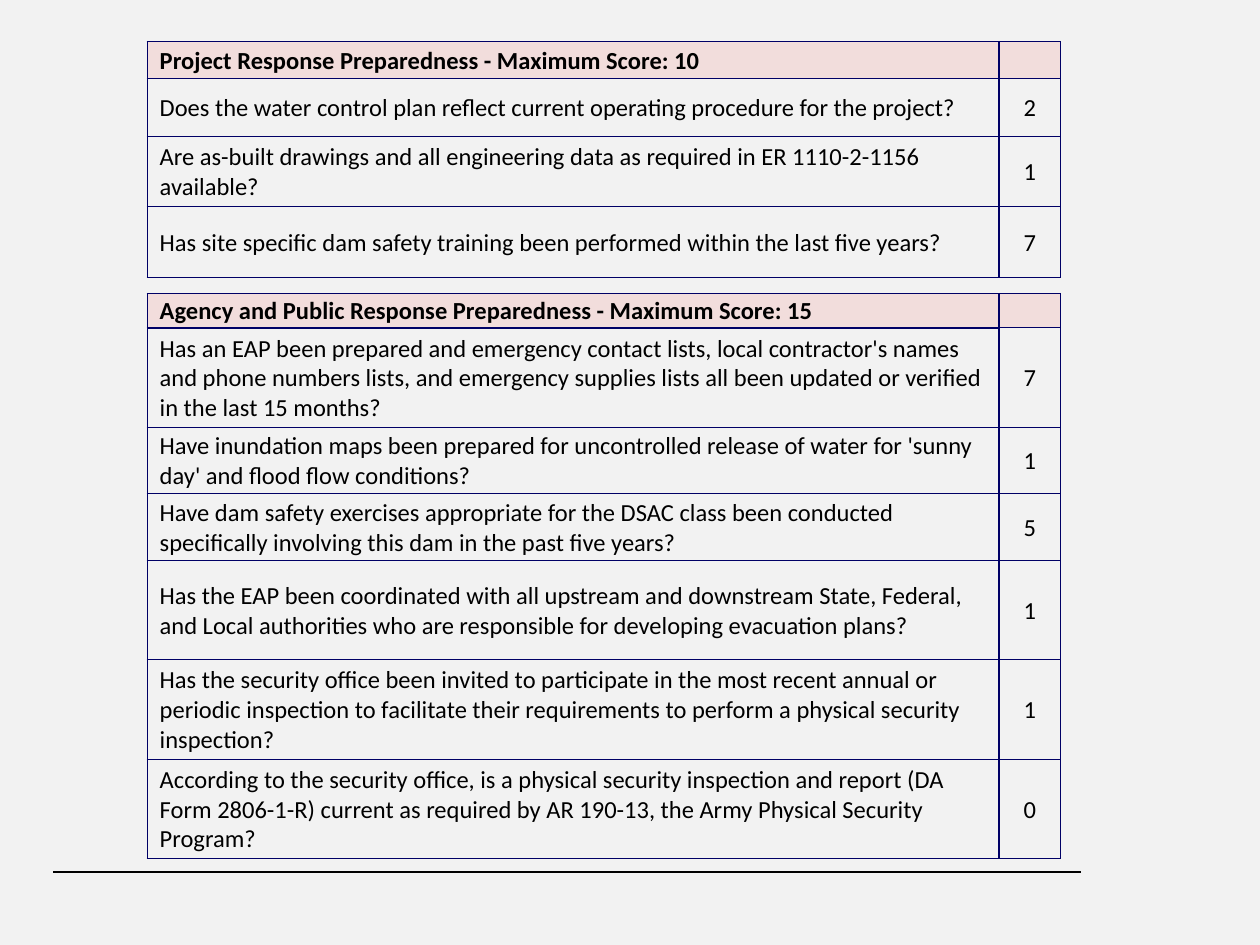
import dataclasses
import typing

import lxml.etree
import pptx
import pptx.dml.color
import pptx.enum.shapes
import pptx.enum.text
import pptx.oxml.ns
import pptx.util

Cm = pptx.util.Cm
Pt = pptx.util.Pt


@dataclasses.dataclass(frozen=True)
class Theme:
    background: str = "F2F2F2"
    header: str = "F2DDDC"
    border: str = "000066"
    text: str = "000000"
    font: str = "Calibri"
    text_size: float = 14
    heavy: float = 1
    light: float = 0.5
    footer_line: float = 0.75


class Question(typing.NamedTuple):
    text: str
    score: str
    height: float


class Section(typing.NamedTuple):
    title: str
    top: float
    header_height: float
    score_rule: float  # line width below the empty score heading
    questions: list[Question]


THEME = Theme()
TABLE_LEFT = 2.97
COLUMN_WIDTHS = (17.17, 1.24)
CENTER = pptx.enum.text.PP_ALIGN.CENTER
LEFT = pptx.enum.text.PP_ALIGN.LEFT

SECTIONS = [
    Section("Project Response Preparedness - Maximum Score: 10", 0.84, 0.74, THEME.heavy, [
        Question("Does the water control plan reflect current operating procedure for the project?",
                 "2", 1.17),
        Question("Are as-built drawings and all engineering data as required in ER 1110-2-1156 "
                 "available?", "1", 1.42),
        Question("Has site specific dam safety training been performed within the last five years?",
                 "7", 1.42),
    ]),
    Section("Agency and Public Response Preparedness - Maximum Score: 15", 5.92, 0.69, THEME.light, [
        Question("Has an EAP been prepared and emergency contact lists, local contractor's names "
                 "and phone numbers lists, and emergency supplies lists all been updated or "
                 "verified in the last 15 months?", "7", 2.01),
        Question("Have inundation maps been prepared for uncontrolled release of water for 'sunny "
                 "day' and flood flow conditions?", "1", 1.33),
        Question("Have dam safety exercises appropriate for the DSAC class been conducted "
                 "specifically involving this dam in the past five years?", "5", 1.35),
        Question("Has the EAP been coordinated with all upstream and downstream State, Federal, "
                 "and Local authorities who are responsible for developing evacuation plans?",
                 "1", 2.0),
        Question("Has the security office been invited to participate in the most recent annual "
                 "or periodic inspection to facilitate their requirements to perform a physical "
                 "security inspection?", "1", 2.01),
        Question("According to the security office, is a physical security inspection and report "
                 "(DA Form 2806-1-R) current as required by AR 190-13, the Army Physical Security "
                 "Program?", "0", 2.0),
    ]),
]


def color(value: str) -> pptx.dml.color.RGBColor:
    return pptx.dml.color.RGBColor.from_string(value)


def set_values(target: object, values: dict[str, object]) -> None:
    for name, value in values.items():
        setattr(target, name, value)


def add_element(parent, tag: str, **attributes: str):
    return lxml.etree.SubElement(parent, pptx.oxml.ns.qn(tag), attributes)


def set_borders(cell, top: float, bottom: float) -> None:
    """Draw the four cell borders; the sides are always heavy."""
    properties = cell._tc.get_or_add_tcPr()
    widths = {"a:lnL": THEME.heavy, "a:lnR": THEME.heavy, "a:lnT": top, "a:lnB": bottom}
    for tag, width in widths.items():
        line = add_element(properties, tag, w=str(Pt(width)))
        add_element(add_element(line, "a:solidFill"), "a:srgbClr", val=THEME.border)


def fill_cell(cell, text: str, column: int, is_header: bool) -> None:
    set_values(cell, {
        "margin_left": Cm(0.03 if column else 0.25),
        "margin_right": Cm(0.03),
        "margin_top": Cm(0.03),
        "margin_bottom": 0,
        "vertical_anchor": pptx.enum.text.MSO_ANCHOR.MIDDLE,
    })
    if is_header:
        cell.fill.solid()
        cell.fill.fore_color.rgb = color(THEME.header)
    else:
        cell.fill.background()
    paragraph = cell.text_frame.paragraphs[0]
    paragraph.alignment = CENTER if column else LEFT
    if not text:
        # An empty cell still needs the text size, or its row grows.
        add_element(paragraph._p, "a:endParaRPr", sz=str(int(THEME.text_size * 100)))
        return
    run = paragraph.add_run()
    run.text = text
    set_values(run.font, {"name": THEME.font, "size": Pt(THEME.text_size), "bold": is_header})
    run.font.color.rgb = color(THEME.text)


def add_section(slide, section: Section) -> None:
    rows = [Question(section.title, "", section.header_height), *section.questions]
    frame = slide.shapes.add_table(
        len(rows), len(COLUMN_WIDTHS), Cm(TABLE_LEFT), Cm(section.top),
        Cm(sum(COLUMN_WIDTHS)), Cm(sum(row.height for row in rows)))
    table = frame.table
    set_values(table, {"first_row": False, "horz_banding": False})
    for column, width in zip(table.columns, COLUMN_WIDTHS):
        column.width = Cm(width)
    header_rules = (THEME.heavy, section.score_rule)
    for row_index, row in enumerate(rows):
        table.rows[row_index].height = Cm(row.height)
        for column_index, text in enumerate((row.text, row.score)):
            cell = table.cell(row_index, column_index)
            rule = header_rules[column_index]
            top = {0: THEME.heavy, 1: rule}.get(row_index, THEME.light)
            set_borders(cell, top, THEME.light if row_index else rule)
            fill_cell(cell, text, column_index, row_index == 0)


def add_footer_line(slide) -> None:
    connector = slide.shapes.add_connector(
        pptx.enum.shapes.MSO_CONNECTOR.STRAIGHT, Cm(21.79), Cm(17.58), Cm(1.07), Cm(17.58))
    connector.line.color.rgb = color(THEME.text)
    connector.line.width = Pt(THEME.footer_line)
    add_element(connector._element.spPr, "a:effectLst")


def main() -> None:
    presentation = pptx.Presentation()
    set_values(presentation, {"slide_width": Cm(25.4), "slide_height": Cm(19.05)})
    slide = presentation.slides.add_slide(presentation.slide_layouts[6])
    slide.background.fill.solid()
    slide.background.fill.fore_color.rgb = color(THEME.background)
    add_footer_line(slide)
    for section in SECTIONS:
        add_section(slide, section)
    presentation.save("out.pptx")


if __name__ == "__main__":
    main()
